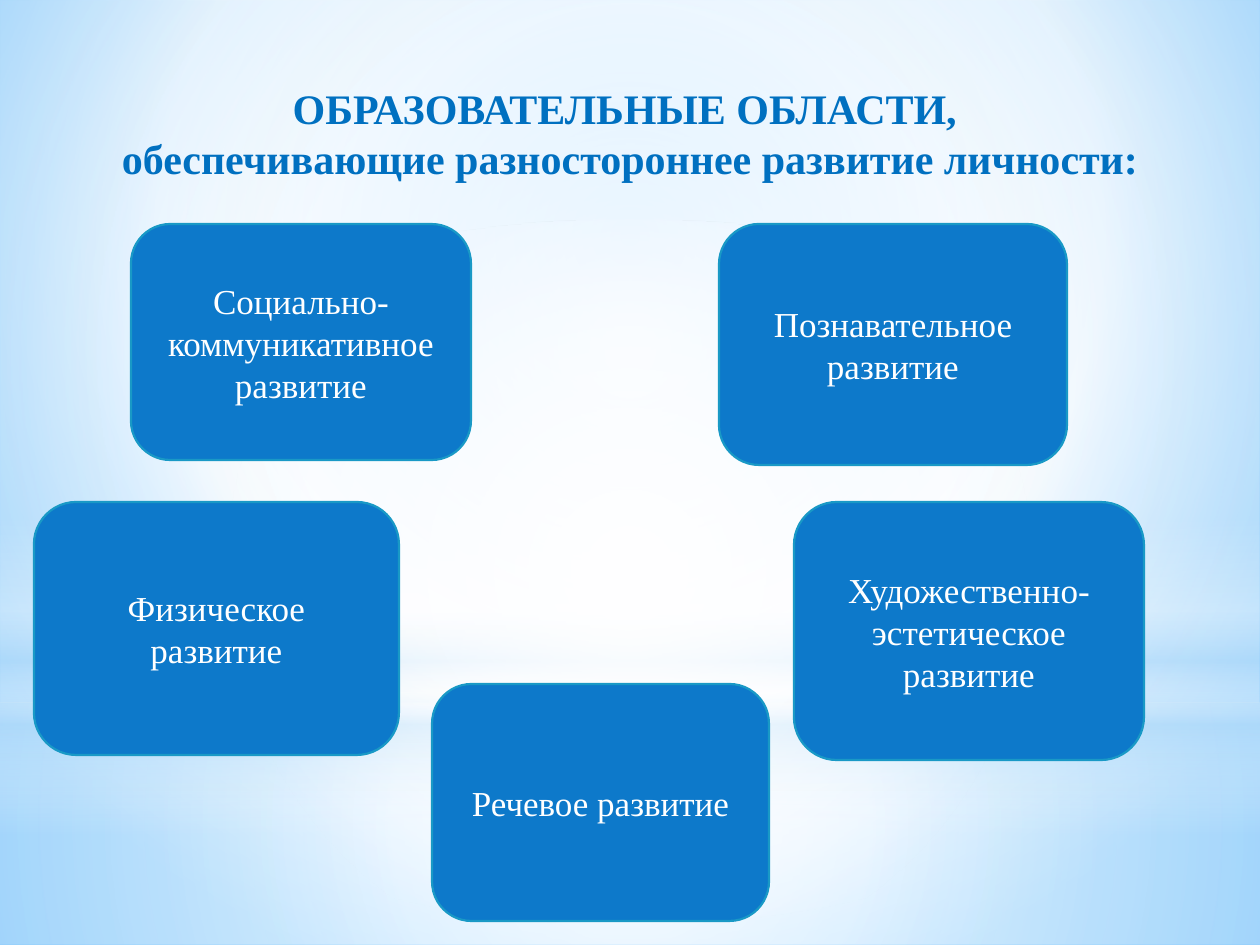
from lxml import etree
from pptx import Presentation, util as u
from pptx.dml.color import RGBColor
from pptx.enum import shapes, text
from pptx.oxml.ns import qn

PX = 914400 / 126
FONT = "Times New Roman"
CENTRE = (50, 50, 50, 50)


def px(*lengths):
    return [u.Emu(round(n * PX)) for n in lengths]


def set_gradient(fill, element, stops, focus=None):
    """Stops are (position %, colour, opacity %); without a focus it runs downwards."""
    fill.gradient()
    grad = element.find(".//" + qn("a:gradFill"))
    for child in list(grad):
        grad.remove(child)
    stop_list = etree.SubElement(grad, qn("a:gsLst"))
    for pos, colour, opacity in stops:
        stop = etree.SubElement(stop_list, qn("a:gs"), pos=str(pos * 1000))
        clr = etree.SubElement(stop, qn("a:srgbClr"), val=colour)
        if opacity < 100:
            etree.SubElement(clr, qn("a:alpha"), val=str(opacity * 1000))
    if focus:
        path = etree.SubElement(grad, qn("a:path"), path="circle")
        sides = {k: str(v * 1000) for k, v in zip("ltrb", focus)}
        etree.SubElement(path, qn("a:fillToRect"), sides)
    else:
        etree.SubElement(grad, qn("a:lin"), ang="5400000", scaled="0")


prs = Presentation()
prs.slide_width, prs.slide_height = px(1260, 945)
s = prs.slides.add_slide(prs.slide_layouts[6])

# Background and its light layers
set_gradient(s.background.fill, s.element,
             [(0, "9ED5FF", 100), (60, "FFFFFF", 100), (100, "5BB9FF", 100)],
             (20, 10, 20, 60))

RECT, OVAL = shapes.MSO_SHAPE.RECTANGLE, shapes.MSO_SHAPE.OVAL
layers = [
    (RECT, 703, 242, CENTRE,
     [(0, "FFFFFF", 91), (37, "FFFFFF", 76), (100, "B4DCFA", 79)]),
    (RECT, 0, 703, CENTRE,
     [(0, "FFFFFF", 89), (48, "FFFFFF", 62), (100, "B4DCFA", 79)]),
    (RECT, 519, 315, None,
     [(0, "FFFFFF", 0), (29, "FFFFFF", 30), (45, "B4DCFA", 40),
      (55, "FFFFFF", 26), (65, "B4DCFA", 60), (100, "FFFFFF", 0)]),
    (OVAL, 220, 703, CENTRE, [(0, "FFFFFF", 100), (56, "FFFFFF", 0)]),
]
for kind, top, height, focus, stops in layers:
    sp = s.shapes.add_shape(kind, *px(0, top, 1260, height))
    sp.shadow.inherit = False
    sp.line.fill.background()
    set_gradient(sp.fill, sp.element, stops, focus)

# Title
title_font = {"name": FONT, "size": u.Pt(24), "bold": True}
tf = s.shapes.add_textbox(*px(74, 76, 1112, 115)).text_frame
tf.word_wrap = True
tf.auto_size = text.MSO_AUTO_SIZE.SHAPE_TO_FIT_TEXT
tf.text = ("ОБРАЗОВАТЕЛЬНЫЕ ОБЛАСТИ, \n"
           "обеспечивающие разностороннее развитие личности:")
for p in tf.paragraphs:
    p.alignment = text.PP_ALIGN.CENTER
    r = p.runs[0]
    for key, value in title_font.items():
        setattr(r.font, key, value)
    r.font.color.rgb = RGBColor.from_string("0070C0")

# Educational areas
area_font = {"name": FONT, "size": u.Pt(20)}
areas = [
    ("Социально-коммуникативное развитие", 131, 224, 340, 236),
    ("Познавательное развитие", 719, 224, 348, 241),
    ("Физическое развитие", 34, 502, 365, 253),
    ("Художественно-эстетическое развитие", 794, 502, 350, 258),
    ("Речевое развитие", 432, 684, 337, 237),
]
for name, *box in areas:
    sp = s.shapes.add_shape(shapes.MSO_SHAPE.FLOWCHART_ALTERNATE_PROCESS, *px(*box))
    sp.shadow.inherit = False
    sp.fill.solid()
    sp.fill.fore_color.rgb = RGBColor.from_string("0D79CA")
    sp.line.color.rgb = RGBColor.from_string("1999C6")
    sp.line.width = u.Pt(1.25)
    tf = sp.text_frame
    tf.word_wrap = True
    tf.vertical_anchor = text.MSO_ANCHOR.MIDDLE
    p = tf.paragraphs[0]
    p.alignment = text.PP_ALIGN.CENTER
    r = p.add_run()
    r.text = name
    for key, value in area_font.items():
        setattr(r.font, key, value)
    r.font.color.rgb = RGBColor.from_string("FFFFFF")

prs.save("out.pptx")
